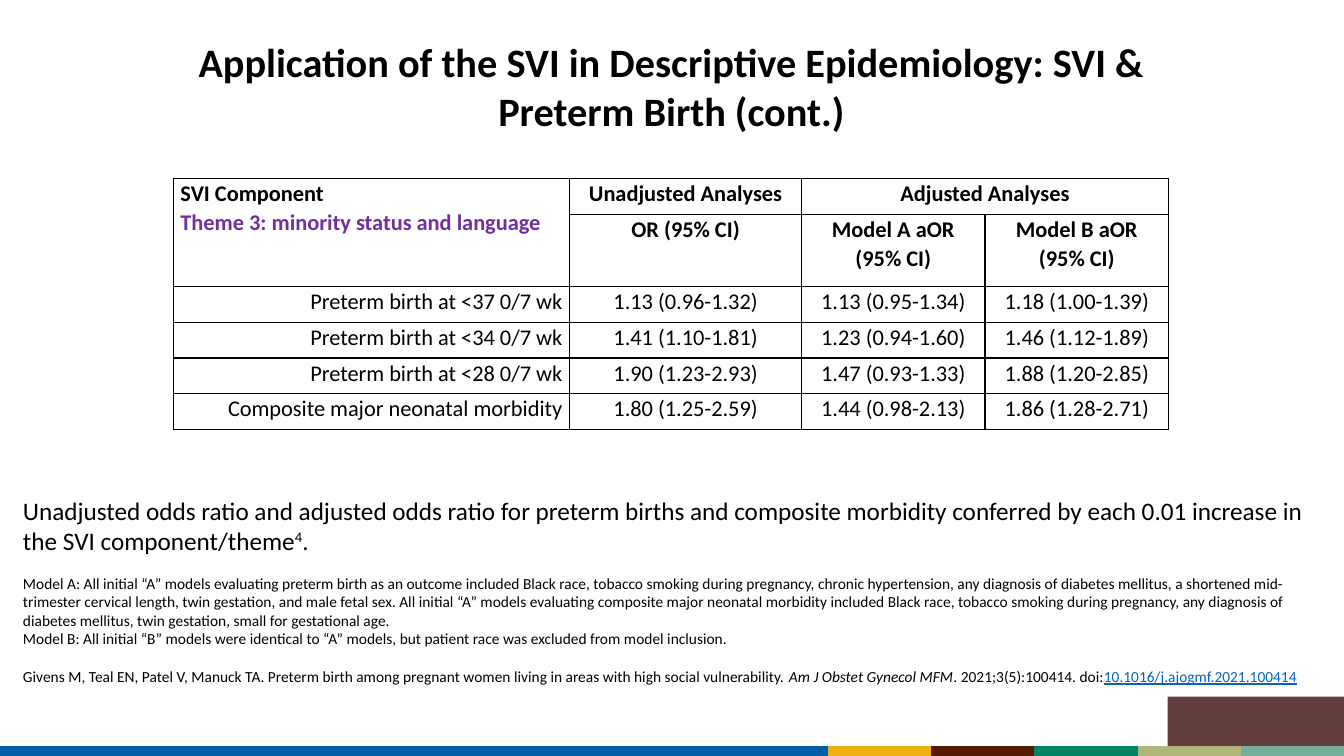
from dataclasses import dataclass

from lxml import etree
from pptx import Presentation
from pptx import util as u
from pptx.dml.color import RGBColor
from pptx.enum import shapes, text
from pptx.oxml import ns

ALIGN = text.PP_ALIGN


@dataclass(frozen=True)
class Theme:
    font: str = "Calibri"
    ink: str = "000000"
    purple: str = "7030A0"
    doi: str = "0563C1"
    block: str = "633D3D"
    blue: str = "005DAA"
    stripes: tuple = ("EEB111", "541900", "008265", "B0B579", "76AE99")
    title_size: float = 28.8
    table_size: float = 16
    lead_size: float = 18
    note_size: float = 11


THEME = Theme()

COLUMN_WIDTHS = (3.93, 2.3, 1.82, 1.82)
TALL_ROW = 0.72
RESULTS = (
    ("Preterm birth at <37 0/7 wk", "1.13 (0.96-1.32)", "1.13 (0.95-1.34)", "1.18 (1.00-1.39)"),
    ("Preterm birth at <34 0/7 wk", "1.41 (1.10-1.81)", "1.23 (0.94-1.60)", "1.46 (1.12-1.89)"),
    ("Preterm birth at <28 0/7 wk", "1.90 (1.23-2.93)", "1.47 (0.93-1.33)", "1.88 (1.20-2.85)"),
    ("Composite major neonatal morbidity", "1.80 (1.25-2.59)", "1.44 (0.98-2.13)", "1.86 (1.28-2.71)"),
)


def add_run(paragraph, words, size, color=THEME.ink, bold=False, italic=False, underline=False):
    run = paragraph.add_run()
    run.text = words
    font = run.font
    font.name, font.size = THEME.font, u.Pt(size)
    font.bold, font.italic, font.underline = bold, italic, underline
    font.color.rgb = RGBColor.from_string(color)
    return run


def add_text_frame(slide, box):
    frame = slide.shapes.add_textbox(*map(u.Inches, box)).text_frame
    frame.word_wrap = True
    return frame


def add_title(slide, box):
    frame = add_text_frame(slide, box)
    frame.vertical_anchor = text.MSO_ANCHOR.MIDDLE
    heading = frame.paragraphs[0]
    heading.alignment = ALIGN.CENTER
    add_run(heading, "Application of the SVI in Descriptive Epidemiology: SVI & Preterm Birth (cont.)",
            THEME.title_size, bold=True)


def add_footer(slide, box):
    left, top, width, height = box
    # Brand block above the stripes
    block = slide.shapes.add_shape(
        shapes.MSO_SHAPE.RECTANGLE, u.Inches(left + width - 1.75), u.Inches(top),
        u.Inches(1.75), u.Inches(0.49))
    block.shadow.inherit = False
    block.fill.solid()
    block.fill.fore_color.rgb = RGBColor.from_string(THEME.block)
    block.line.fill.background()

    # One long blue stripe, then equal short ones
    long_stripe = 8.21
    step = (width - long_stripe) / len(THEME.stripes)
    ends = [left] + [left + long_stripe + i * step for i in range(len(THEME.stripes) + 1)]
    middle = u.Inches(top + height - 0.05)
    for start, end, color in zip(ends, ends[1:], (THEME.blue, *THEME.stripes)):
        stripe = slide.shapes.add_connector(
            shapes.MSO_CONNECTOR.STRAIGHT, u.Inches(start), middle, u.Inches(end), middle)
        stripe.line.width = u.Pt(7.5)
        stripe.line.color.rgb = RGBColor.from_string(color)
        etree.SubElement(stripe._element.spPr, ns.qn("a:effectLst"))


def style_cell(cell):
    cell.margin_left = cell.margin_right = u.Inches(0.07)
    cell.margin_top = cell.margin_bottom = 0
    properties = cell._tc.get_or_add_tcPr()
    for side in ("lnL", "lnR", "lnT", "lnB"):
        border = etree.SubElement(properties, ns.qn(f"a:{side}"), w=str(u.Pt(1)))
        fill = etree.SubElement(border, ns.qn("a:solidFill"))
        etree.SubElement(fill, ns.qn("a:srgbClr"), val=THEME.ink)
    cell.fill.background()


def write_cell(cell, words, align, bold=False, color=THEME.ink, new_paragraph=False):
    frame = cell.text_frame
    paragraph = frame.add_paragraph() if new_paragraph else frame.paragraphs[0]
    paragraph.alignment = align
    paragraph.line_spacing = 1.07
    add_run(paragraph, words, THEME.table_size, color, bold)


def add_odds_table(slide, box):
    row_count = len(RESULTS) + 2
    table = slide.shapes.add_table(row_count, len(COLUMN_WIDTHS), *map(u.Inches, box)).table
    table.first_row = table.horz_banding = False
    for column, width in zip(table.columns, COLUMN_WIDTHS):
        column.width = u.Inches(width)
    short_row = (box[3] - TALL_ROW) / (row_count - 1)
    for index, row in enumerate(table.rows):
        row.height = u.Inches(TALL_ROW if index == 1 else short_row)
    for cell in table.iter_cells():
        style_cell(cell)

    # Headings
    component = table.cell(0, 0)
    component.merge(table.cell(1, 0))
    table.cell(0, 2).merge(table.cell(0, 3))
    write_cell(component, "SVI Component", ALIGN.LEFT, bold=True)
    write_cell(component, "Theme 3: minority status and language", ALIGN.LEFT,
               bold=True, color=THEME.purple, new_paragraph=True)
    headings = (("Unadjusted Analyses", "Adjusted Analyses"),
                ("OR (95% CI)", "Model A aOR (95% CI)", "Model B aOR (95% CI)"))
    for r, labels in enumerate(headings):
        for c, label in enumerate(labels, 1):
            write_cell(table.cell(r, c), label, ALIGN.CENTER, bold=True)

    # Results
    for r, result in enumerate(RESULTS, 2):
        for c, value in enumerate(result):
            write_cell(table.cell(r, c), value, ALIGN.CENTER if c else ALIGN.RIGHT)


def add_notes_area(slide, box):
    frame = add_text_frame(slide, box)
    gap = u.Pt(13.4)

    # Table caption
    caption = frame.paragraphs[0]
    add_run(caption, "Unadjusted odds ratio and adjusted odds ratio for preterm births and composite "
            "morbidity conferred by each 0.01 increase in the SVI component/theme", THEME.lead_size)
    reference_mark = add_run(caption, "4", THEME.lead_size)
    reference_mark._r.get_or_add_rPr().set("baseline", "30000")
    add_run(caption, ".", THEME.lead_size)

    # Model definitions
    model_a = frame.add_paragraph()
    model_a.space_before = gap
    add_run(model_a, "Model A: All initial “A” models evaluating preterm birth as an outcome included "
            "Black race, tobacco smoking during pregnancy, chronic hypertension, any diagnosis of "
            "diabetes mellitus, a shortened mid-trimester cervical length, twin gestation, and male "
            "fetal sex. All initial “A” models evaluating composite major neonatal morbidity included "
            "Black race, tobacco smoking during pregnancy, any diagnosis of diabetes mellitus, twin "
            "gestation, small for gestational age.", THEME.note_size)
    model_b = frame.add_paragraph()
    add_run(model_b, "Model B: All initial “B” models were identical to “A” models, but patient race "
            "was excluded from model inclusion.", THEME.note_size)

    # Citation
    citation = frame.add_paragraph()
    citation.space_before = gap
    add_run(citation, "Givens M, Teal EN, Patel V, Manuck TA. Preterm birth among pregnant women "
            "living in areas with high social vulnerability. ", THEME.note_size)
    add_run(citation, "Am J Obstet Gynecol MFM", THEME.note_size, italic=True)
    add_run(citation, ". 2021;3(5):100414. doi:", THEME.note_size)
    add_run(citation, "10.1016/j.ajogmf.2021.100414", THEME.note_size, THEME.doi, underline=True)


def main():
    deck = Presentation()
    deck.slide_width, deck.slide_height = u.Inches(13.33), u.Inches(7.5)
    slide = deck.slides.add_slide(deck.slide_layouts[6])
    add_footer(slide, (0, 6.91, 13.33, 0.59))
    add_title(slide, (1.72, 0.31, 9.88, 1.08))
    add_odds_table(slide, (1.72, 1.77, 9.88, 2.49))
    add_notes_area(slide, (0.13, 4.86, 13.2, 2.49))
    deck.save("out.pptx")


if __name__ == "__main__":
    main()
